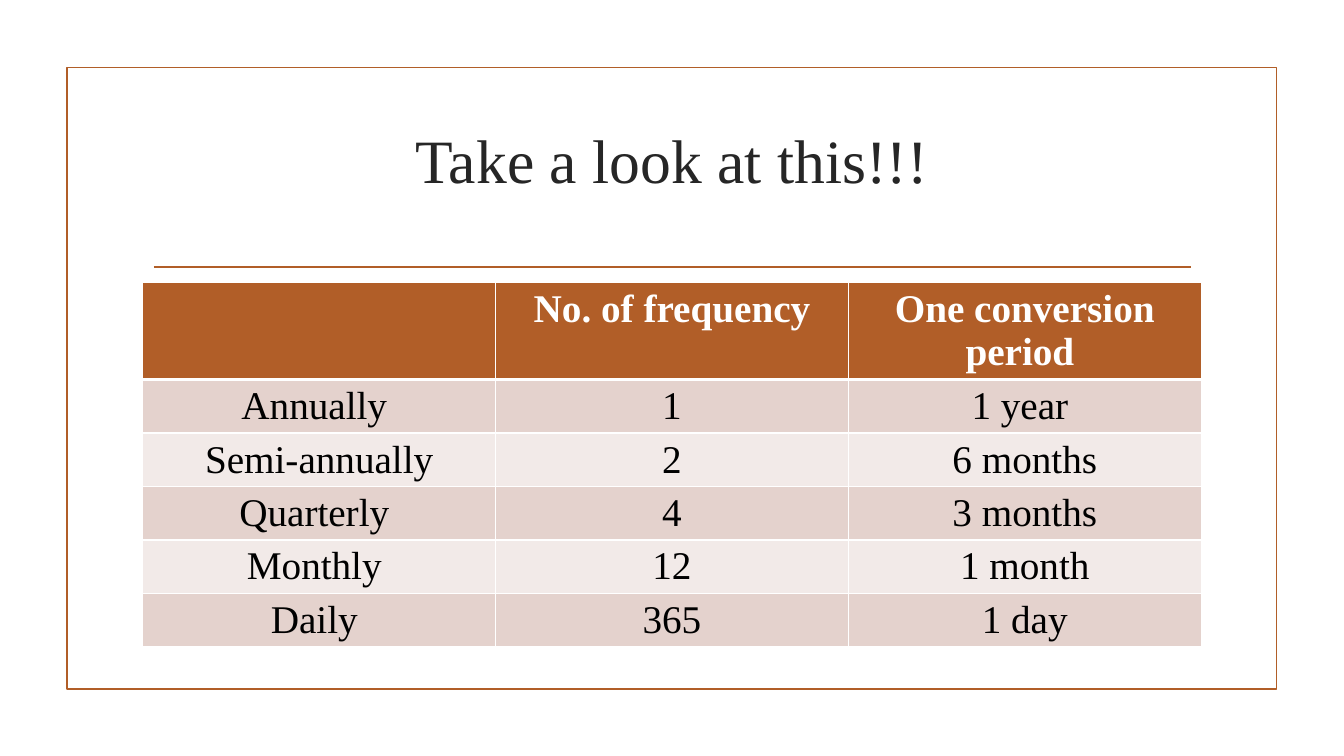
from lxml.etree import SubElement
from pptx import Presentation
from pptx.dml.color import RGBColor
from pptx.enum.shapes import MSO_CONNECTOR, MSO_SHAPE
from pptx.enum.text import MSO_ANCHOR, PP_ALIGN
from pptx.oxml import parse_xml
from pptx.oxml.ns import nsdecls, qn
from pptx.util import Pt

TITLE = "Take a look at this!!!"
FREQUENCIES = [
    ("", "No. of frequency", "One conversion period "),
    ("Annually ", "1", "1 year "),
    ("Semi-annually", "2", "6 months"),
    ("Quarterly ", "4", "3 months"),
    ("Monthly ", "12", "1 month"),
    ("Daily ", "365", "1 day"),
]
COLORS = {
    "accent": "B15E28", "title": "262626", "header_text": "FFFFFF",
    "body_text": "000000", "border": "FFFFFF",
    "odd_row": "E4D2CD", "even_row": "F2EAE8",
}
FONT = "Times New Roman"
COLUMN_WIDTH, HEADER_HEIGHT, ROW_HEIGHT = 252, 69.3, 38.2


def color(name):
    return RGBColor.from_string(COLORS[name])


def write(frame, text, size=28, ink="body_text", bold=False):
    paragraph = frame.paragraphs[0]
    paragraph.alignment = PP_ALIGN.CENTER
    run = paragraph.add_run()
    run.text = text
    run.font.name, run.font.size, run.font.bold = FONT, Pt(size), bold
    run.font.color.rgb = color(ink)


def outline(line):
    line.color.rgb = color("accent")
    line.width = Pt(1.25)


def add_borders(cell, top, bottom):
    """Draw the four cell borders; top and bottom are widths in points."""
    properties = cell._tc.get_or_add_tcPr()
    widths = {"lnL": 1, "lnR": 1, "lnT": top, "lnB": bottom}
    for position, (side, width) in enumerate(widths.items()):
        properties.insert(position, parse_xml(
            f'<a:{side} {nsdecls("a")} w="{Pt(width)}"><a:solidFill>'
            f'<a:srgbClr val="{COLORS["border"]}"/></a:solidFill></a:{side}>'))


presentation = Presentation()
presentation.slide_width, presentation.slide_height = Pt(960), Pt(540)
slide = presentation.slides.add_slide(presentation.slide_layouts[5])

frame = slide.shapes.add_shape(
    MSO_SHAPE.RECTANGLE, Pt(47.8), Pt(48.2), Pt(864), Pt(444))
frame.shadow.inherit = False
frame.fill.background()
outline(frame.line)

rule = slide.shapes.add_connector(
    MSO_CONNECTOR.STRAIGHT, Pt(110), Pt(190.8), Pt(850.5), Pt(190.8))
outline(rule.line)
SubElement(rule._element.spPr, qn("a:effectLst"))

title = slide.shapes.title
title.left, title.top, title.width, title.height = Pt(80), Pt(63.4), Pt(800), Pt(100.8)
title.text_frame.vertical_anchor = MSO_ANCHOR.MIDDLE
write(title.text_frame, TITLE, size=44, ink="title")

row_count, column_count = len(FREQUENCIES), len(FREQUENCIES[0])
table = slide.shapes.add_table(
    row_count, column_count, Pt(102), Pt(201.8), Pt(COLUMN_WIDTH * column_count),
    Pt(HEADER_HEIGHT + ROW_HEIGHT * (row_count - 1))).table
for column in table.columns:
    column.width = Pt(COLUMN_WIDTH)

for index, labels in enumerate(FREQUENCIES):
    header = index == 0
    table.rows[index].height = Pt(HEADER_HEIGHT if header else ROW_HEIGHT)
    background = "accent" if header else "odd_row" if index % 2 else "even_row"
    for cell, label in zip(table.rows[index].cells, labels):
        cell.fill.solid()
        cell.fill.fore_color.rgb = color(background)
        add_borders(cell, top=3 if index == 1 else 1, bottom=3 if header else 1)
        if label:
            write(cell.text_frame, label, bold=header,
                  ink="header_text" if header else "body_text")

presentation.save("out.pptx")
